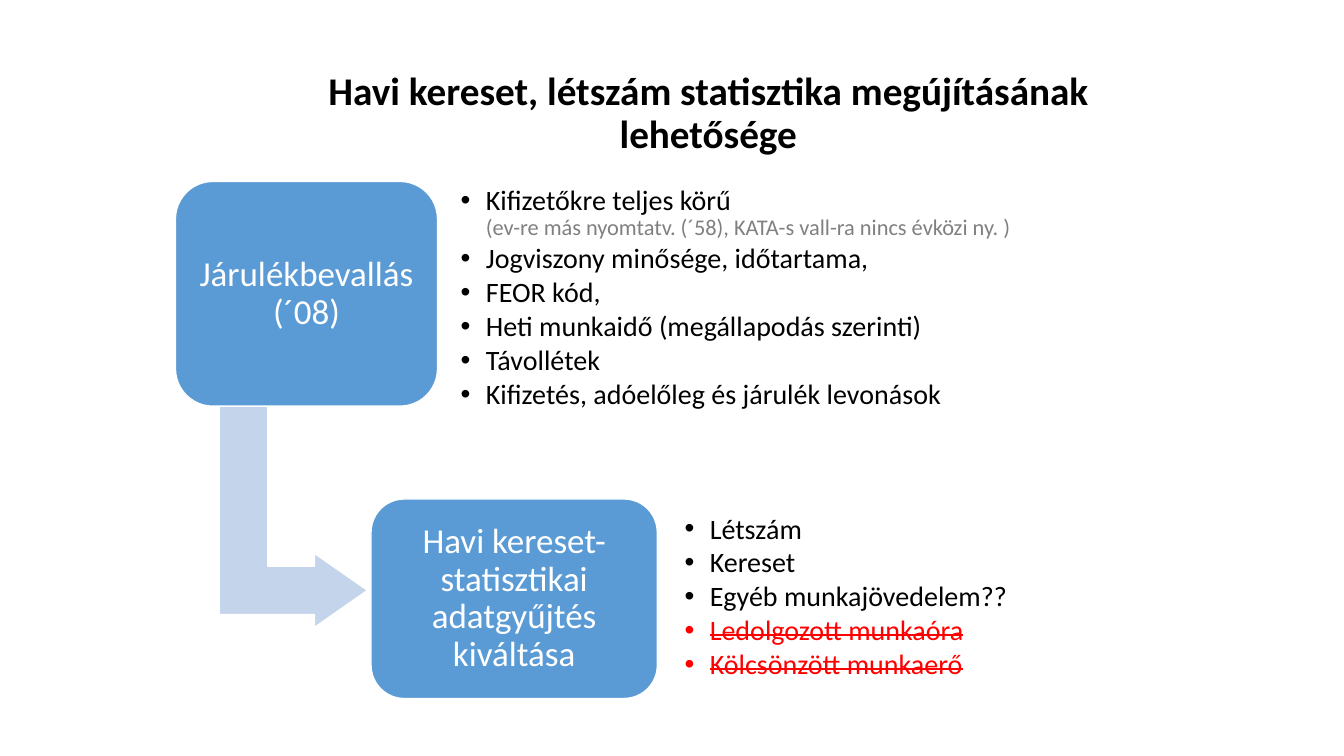
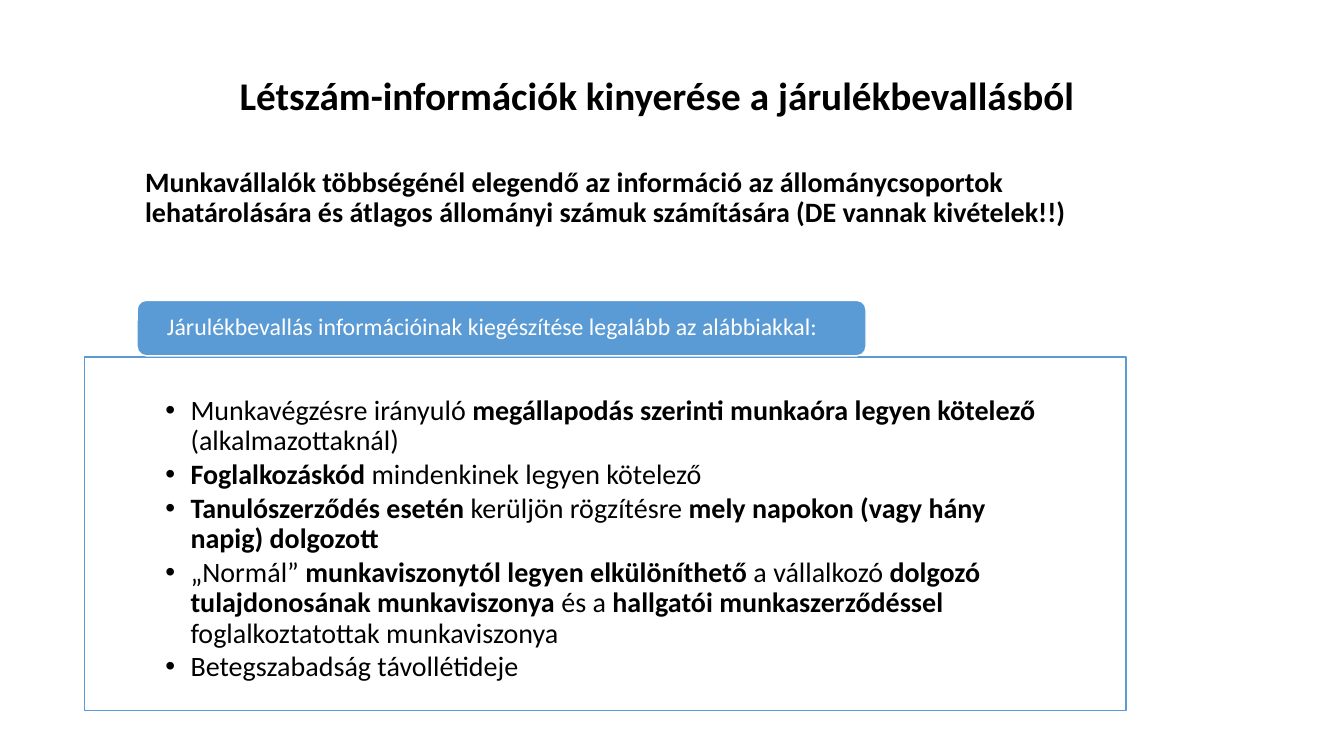
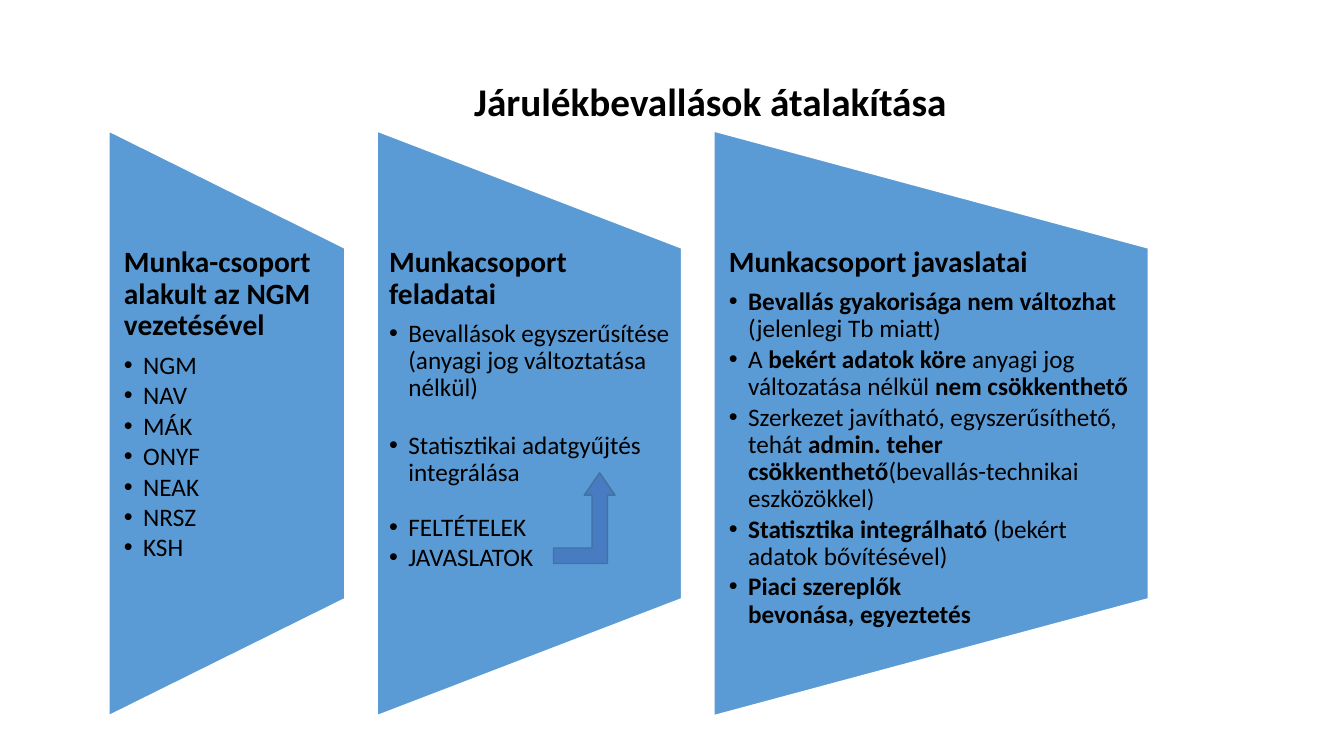
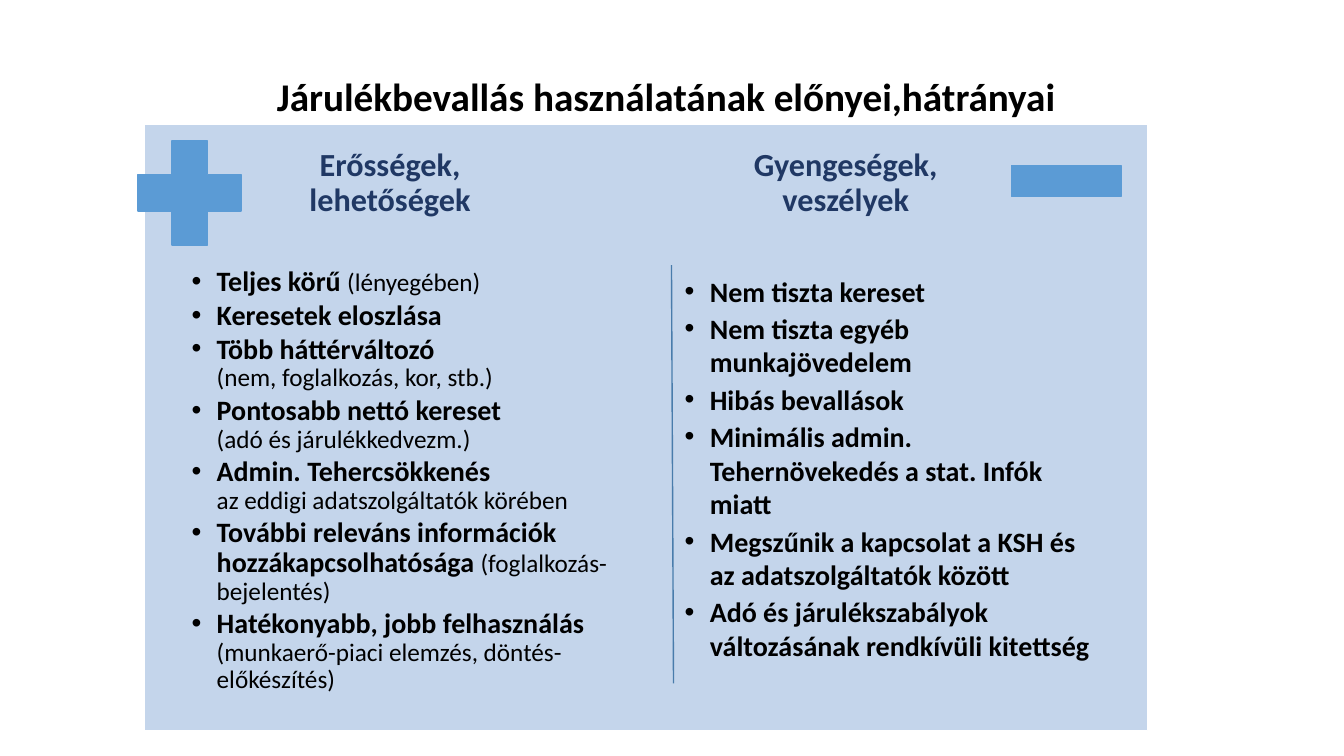
"""Build four slides on monthly earnings statistics taken from contribution returns."""
from lxml import etree
from pptx import Presentation
from pptx.dml.color import RGBColor
from pptx.enum import shapes, text
from pptx.oxml import ns
from pptx.util import Inches, Pt

COLORS = {"blue": "5B9BD5", "pale": "C4D5EB", "white": "FFFFFF", "black": "000000",
          "gray": "808080", "red": "FF0000", "navy": "203864", "arrow": "3965B5",
          "arrow_line": "43739E", "divider": "497CAB"}
FONT = "Calibri"
KIND = shapes.MSO_SHAPE
CENTER, LEFT = text.PP_ALIGN.CENTER, text.PP_ALIGN.LEFT
MIDDLE, TOP = text.MSO_ANCHOR.MIDDLE, text.MSO_ANCHOR.TOP

PLAIN = {"size": 20}
BOLD = {"size": 20, "bold": True}
NOTE = {"size": 16, "color": "gray"}
STRUCK = {"size": 20, "color": "red", "strike": True}
SMALL, SMALL_BOLD = {"size": 18}, {"size": 18, "bold": True}
TITLE = {"size": 28, "bold": True}
COLUMN_HEAD = {"size": 21, "bold": True}
SIDE_HEAD = {"size": 23, "bold": True, "color": "navy"}
BOX_LABEL = {"size": 25, "color": "white"}
PILL_LABEL = {"size": 17, "color": "white"}

TITLES = [
    ("Havi kereset, létszám statisztika megújításának lehetősége", (2.49, 0.76, 9.07, 0.75)),
    ("Létszám-információk kinyerése a járulékbevallásból", (1.23, 0.51, 10.57, 0.92)),
    ("Járulékbevallások átalakítása", (2.51, 0.76, 9.07, 0.54)),
    ("Járulékbevallás használatának előnyei,hátrányai", (2.07, 0.52, 9.07, 0.92)),
]

STEPS = [
    ("Járulékbevallás\n(´08)", (1.74, 1.8, 2.6, 2.23), (4.49, 1.76, 6.17, 2.4), NOTE, [
        "Kifizetőkre teljes körű\n*(ev-re más nyomtatv. (´58), KATA-s vall-ra nincs évközi ny. )*",
        "Jogviszony minősége, időtartama,",
        "FEOR kód,",
        "Heti munkaidő (megállapodás szerinti)",
        "Távollétek",
        "Kifizetés, adóelőleg és járulék levonások"]),
    ("Havi kereset-statisztikai adatgyűjtés\nkiváltása", (3.68, 4.95, 2.84, 1.98),
     (6.71, 4.72, 3.68, 2.42), STRUCK, [
        "Létszám",
        "Kereset",
        "Egyéb munkajövedelem??",
        "*Ledolgozott munkaóra*",
        "*Kölcsönzött munkaerő*"]),
]

INTRO = ("Munkavállalók többségénél elegendő az információ az állománycsoportok "
         "lehatárolására és átlagos állományi számuk számítására (DE vannak kivételek!!)")
ADDITIONS_HEAD = "Járulékbevallás információinak kiegészítése legalább az alábbiakkal:"
ADDITIONS = [
    "Munkavégzésre irányuló *megállapodás szerinti munkaóra legyen kötelező *(alkalmazottaknál)",
    "*Foglalkozáskód* mindenkinek legyen kötelező",
    "*Tanulószerződés esetén *kerüljön rögzítésre *mely napokon (vagy hány napig) dolgozott*",
    "„Normál” *munkaviszonytól legyen elkülöníthető *a vállalkozó *dolgozó tulajdonosának "
    "munkaviszonya *és a *hallgatói munkaszerződéssel *foglalkoztatottak munkaviszonya",
    "Betegszabadság távollétideje",
]

COLUMNS = [
    (1.08, 2.34, 0.15, "Munka-csoport alakult az NGM vezetésével",
     ["NGM", "NAV", "MÁK", "ONYF", "NEAK", "NRSZ", "KSH"], {}),
    (3.74, 3.02, 0.12, "Munkacsoport feladatai", [
        "Bevallások egyszerűsítése (anyagi jog változtatása nélkül)",
        "Statisztikai adatgyűjtés integrálása",
        "FELTÉTELEK",
        "JAVASLATOK"], {0: 21.6, 1: 19.5}),
    (7.08, 4.31, 0.15, "Munkacsoport javaslatai", [
        "*Bevallás gyakorisága nem változhat *(jelenlegi Tb miatt)",
        "A *bekért adatok köre *anyagi jog változatása nélkül *nem csökkenthető*",
        "Szerkezet javítható, egyszerűsíthető, tehát *admin. teher csökkenthető*"
        "(bevallás-technikai eszközökkel)",
        "*Statisztika integrálható *(bekért adatok bővítésével)",
        "*Piaci szereplők\nbevonása, egyeztetés*"], {}),
]
COLUMN_TOP, COLUMN_HEIGHT = 1.3, 5.8

SIDES = [
    ("Erősségek,\nlehetőségek", (2.62, 1.44, 2.5, 0.9), (1.86, 2.61, 4.83, 4.61), 0.04, 0.9, [
        "*Teljes körű *(lényegében)",
        "*Keresetek eloszlása*",
        "*Több háttérváltozó*\n(nem, foglalkozás, kor, stb.)",
        "*Pontosabb nettó kereset*\n(adó és járulékkedvezm.)",
        "*Admin. Tehercsökkenés*\naz eddigi adatszolgáltatók körében",
        "*További releváns információk hozzákapcsolhatósága *(foglalkozás-bejelentés)",
        "*Hatékonyabb, jobb felhasználás*\n(munkaerő-piaci elemzés, döntés-előkészítés)"]),
    ("Gyengeségek,\nveszélyek", (7.14, 1.44, 2.5, 0.9), (6.74, 2.67, 4.18, 4.41), 0.05, Pt(24), [
        "*Nem tiszta kereset*",
        "*Nem tiszta egyéb munkajövedelem*",
        "*Hibás bevallások*",
        "*Minimális admin. Tehernövekedés a stat. Infók miatt*",
        "*Megszűnik a kapcsolat a KSH és az adatszolgáltatók között*",
        "*Adó és járulékszabályok változásának rendkívüli kitettség*"]),
]


def rgb(name):
    return RGBColor.from_string(COLORS[name])


def add_run(paragraph, content, style):
    run = paragraph.add_run()
    run.text = content
    values = {"name": FONT, "bold": False, **style}
    color = values.pop("color", "black")
    if values.pop("strike", False):
        run._r.get_or_add_rPr().set("strike", "sngStrike")
    values["size"] = Pt(values["size"])
    for name, value in values.items():
        setattr(run.font, name, value)
    run.font.color.rgb = rgb(color)


def add_bullet(paragraph, indent):
    properties = paragraph._p.get_or_add_pPr()
    properties.set("marL", str(Inches(indent)))
    properties.set("indent", str(-Inches(indent)))
    etree.SubElement(properties, ns.qn("a:buFont")).set("typeface", "Arial")
    etree.SubElement(properties, ns.qn("a:buChar")).set("char", "•")


def write(paragraph, content, plain, marked=None, align=LEFT, spacing=0.9, after=0, bullet=0):
    """Write one paragraph; text between asterisks takes the marked style."""
    formats = {"alignment": align, "line_spacing": spacing, "space_after": Pt(after)}
    for name, value in formats.items():
        setattr(paragraph, name, value)
    if bullet:
        add_bullet(paragraph, bullet)
    for index, part in enumerate(content.split("*")):
        for number, line in enumerate(part.split("\n")):
            if number:
                paragraph.add_line_break()
            if line:
                add_run(paragraph, line, marked if index % 2 else plain)


def prepare(shape, insets, anchor=TOP):
    frame = shape.text_frame
    frame.word_wrap = True
    frame.vertical_anchor = anchor
    for side, inset in zip(("left", "top", "right", "bottom"), insets):
        setattr(frame, "margin_" + side, Inches(inset))
    return frame


def add_text(slide, place, insets=(0.1, 0.05, 0.1, 0.05), anchor=TOP):
    return prepare(slide.shapes.add_textbox(*map(Inches, place)), insets, anchor)


def write_bullets(frame, items, plain, marked, indent=0.25, spacing=0.9, gaps=None, new=False):
    for index, item in enumerate(items):
        paragraph = frame.add_paragraph() if index or new else frame.paragraphs[0]
        after = (gaps or {}).get(index, round(plain["size"] * 0.13, 1))
        write(paragraph, item, plain, marked, spacing=spacing, after=after, bullet=indent)


def add_shape(slide, kind, place, fill, line="white", adjust=(), rotation=0):
    shape = slide.shapes.add_shape(kind, *map(Inches, place))
    shape.shadow.inherit = False
    shape.fill.solid()
    shape.fill.fore_color.rgb = rgb(fill)
    shape.line.color.rgb = rgb(line)
    shape.line.width = Pt(1)
    shape.rotation = rotation
    for index, value in enumerate(adjust):
        shape.adjustments[index] = value
    return shape


def build_renewal(slide):
    add_shape(slide, KIND.BENT_UP_ARROW, (1.43, 4.01, 2.96, 1.47), "pale",
              adjust=(0.328, 0.25, 0.358), rotation=90)
    for label, box, place, marked, items in STEPS:
        shape = add_shape(slide, KIND.ROUNDED_RECTANGLE, box, "blue")
        frame = prepare(shape, [0.1] * 4, MIDDLE)
        write(frame.paragraphs[0], label, BOX_LABEL, align=CENTER)
        write_bullets(add_text(slide, place, [0.08] * 4, MIDDLE), items, PLAIN, marked)


def build_headcount(slide):
    write(add_text(slide, (1.34, 1.62, 10.28, 0.9)).paragraphs[0], INTRO, BOLD)
    panel = add_shape(slide, KIND.RECTANGLE, (0.84, 3.54, 10.33, 3.51), "white", "blue")
    write_bullets(prepare(panel, (0.8, 0.39, 0.8, 0.16)), ADDITIONS, PLAIN, BOLD)
    pill = add_shape(slide, KIND.ROUNDED_RECTANGLE, (1.36, 2.98, 7.23, 0.55), "blue")
    write(prepare(pill, (0.27, 0, 0.27, 0), MIDDLE).paragraphs[0], ADDITIONS_HEAD, PILL_LABEL)


def build_columns(slide):
    for left, width, inset, head, items, gaps in COLUMNS:
        shift = (width - COLUMN_HEIGHT) / 2
        add_shape(slide, KIND.FLOWCHART_MANUAL_OPERATION,
                  (left + shift, COLUMN_TOP - shift, COLUMN_HEIGHT, width), "blue", rotation=270)
        frame = add_text(slide, (left, 2.45, width, 3.48), (inset, 0, inset, 0))
        write(frame.paragraphs[0], head, COLUMN_HEAD, after=7.35)
        write_bullets(frame, items, SMALL, SMALL_BOLD, 0.19, gaps=gaps, new=True)
    arrow = add_shape(slide, KIND.BENT_UP_ARROW, (5.49, 4.69, 0.61, 0.9), "arrow", "arrow_line",
                      (0.25, 0.25, 0.365))
    color = arrow._element.spPr.find(ns.qn("a:solidFill"))[0]
    etree.SubElement(color, ns.qn("a:alpha")).set("val", "59000")


def build_balance(slide):
    add_shape(slide, KIND.RECTANGLE, (1.43, 1.23, 9.95, 6.02), "pale")
    for head, head_place, place, inset, spacing, items in SIDES:
        frame = add_text(slide, head_place, [0.04] * 4)
        write(frame.paragraphs[0], head, SIDE_HEAD, align=CENTER)
        write_bullets(add_text(slide, place, [inset] * 4), items, SMALL, BOLD, spacing=spacing,
                      gaps=dict.fromkeys(range(len(items)), 2.6))
    add_shape(slide, KIND.CROSS, (1.37, 1.4, 1.02, 1.03), "blue", "blue", (0.328,))
    add_shape(slide, KIND.RECTANGLE, (10.03, 1.64, 1.09, 0.31), "blue", "blue")
    divider = slide.shapes.add_connector(shapes.MSO_CONNECTOR.STRAIGHT,
                                         *map(Inches, (6.66, 2.63, 6.68, 6.78)))
    divider.line.color.rgb = rgb("divider")
    divider.line.width = Pt(1)
    etree.SubElement(divider._element.spPr, ns.qn("a:effectLst"))


def main():
    presentation = Presentation()
    presentation.slide_width, presentation.slide_height = Inches(13.33), Inches(7.5)
    builders = (build_renewal, build_headcount, build_columns, build_balance)
    for (title, place), build in zip(TITLES, builders):
        slide = presentation.slides.add_slide(presentation.slide_layouts[6])
        build(slide)
        frame = add_text(slide, place, anchor=MIDDLE)
        write(frame.paragraphs[0], title, TITLE, align=CENTER)
    presentation.save("out.pptx")


if __name__ == "__main__":
    main()
